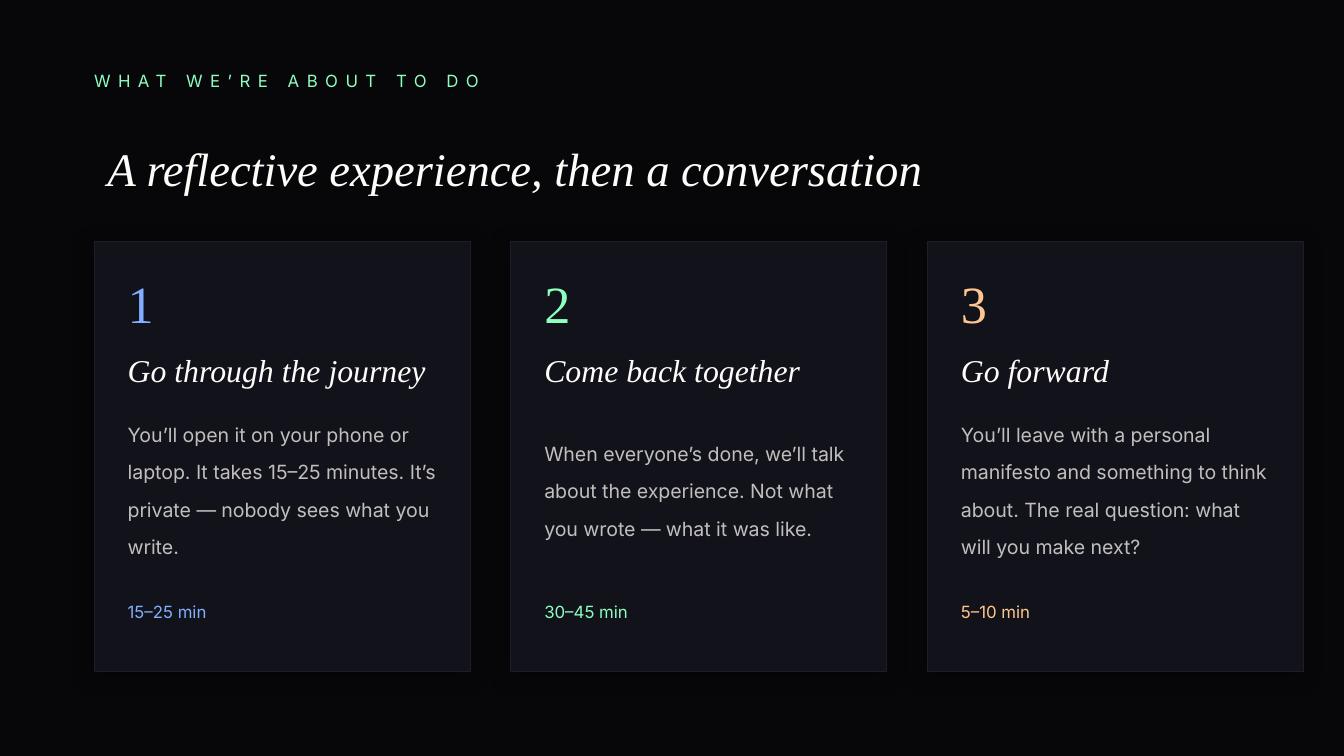
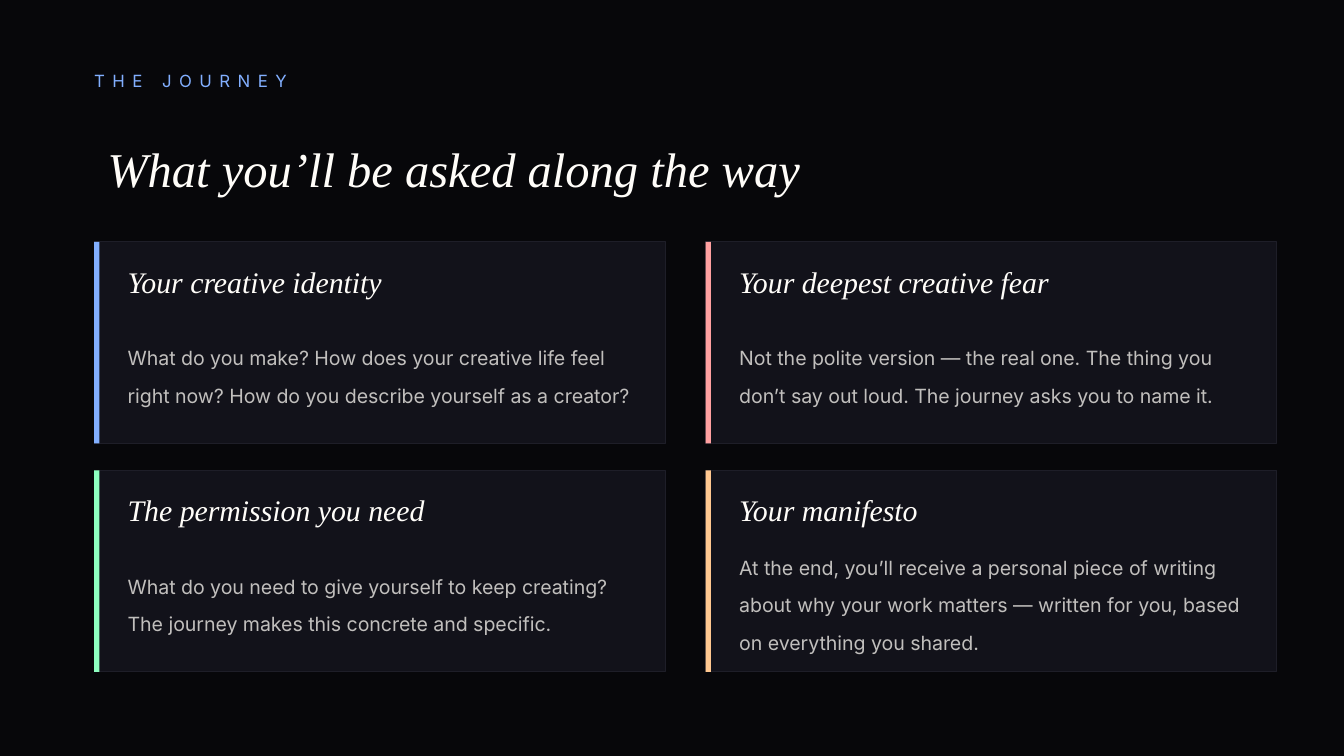
from lxml.etree import SubElement
from pptx import Presentation
from pptx.dml.color import RGBColor
from pptx.enum.shapes import MSO_SHAPE
from pptx.enum.text import MSO_ANCHOR
from pptx.oxml.ns import qn
from pptx.util import Inches, Pt

# Content
STEPS = [
    ("Go through the journey",
     "You’ll open it on your phone or laptop. It takes 15–25 minutes. "
     "It’s private — nobody sees what you write.", "15–25 min", "blue"),
    ("Come back together",
     "When everyone’s done, we’ll talk about the experience. "
     "Not what you wrote — what it was like.", "30–45 min", "green"),
    ("Go forward",
     "You’ll leave with a personal manifesto and something to think about. "
     "The real question: what will you make next?", "5–10 min", "orange"),
]
QUESTIONS = [
    ("Your creative identity",
     "What do you make? How does your creative life feel right now? "
     "How do you describe yourself as a creator?", "blue"),
    ("Your deepest creative fear",
     "Not the polite version — the real one. The thing you don’t say out loud. "
     "The journey asks you to name it.", "red"),
    ("The permission you need",
     "What do you need to give yourself to keep creating? "
     "The journey makes this concrete and specific.", "green"),
    ("Your manifesto",
     "At the end, you’ll receive a personal piece of writing about why your work "
     "matters — written for you, based on everything you shared.", "orange"),
]

# Shared style
COLORS = {
    "background": "07070A", "card": "12121A", "border": "1E1E28",
    "title": "FFFDF9", "body": "C1BFBD", "shadow": "000000",
    "blue": "82AFFF", "green": "8DFFC0", "orange": "FFC78F", "red": "FFA0A0",
}
SANS, SERIF = "Inter", "Times New Roman"
LEFT, CARD_TOP, PAD, GAP = 0.7, 1.8, 0.25, 0.3


def rgb(name):
    return RGBColor.from_string(COLORS[name])


def add_text(s, text, x, y, w, h, size, color, font=SANS, italic=False,
             margin=0, line_spacing=None, tracking=None):
    tf = s.shapes.add_textbox(Inches(x), Inches(y), Inches(w), Inches(h)).text_frame
    tf.word_wrap = True
    tf.vertical_anchor = MSO_ANCHOR.MIDDLE
    tf.margin_left = tf.margin_right = Inches(margin)
    tf.margin_top = tf.margin_bottom = Inches(margin / 2)
    p = tf.paragraphs[0]
    p.text = text
    if line_spacing:
        p.line_spacing = line_spacing
    r = p.runs[0]
    r.font.size, r.font.name, r.font.italic = Pt(size), font, italic
    r.font.color.rgb = rgb(color)
    if tracking:
        r._r.get_or_add_rPr().set("spc", str(tracking * 100))


def add_heading(s, text, x, y, w, h, size, margin=0):
    add_text(s, text, x, y, w, h, size, "title", SERIF, italic=True, margin=margin)


def add_body(s, text, x, y, w, h):
    add_text(s, text, x, y, w, h, 10.5, "body", line_spacing=1.6)


def add_rect(s, x, y, w, h, fill, border=None):
    sp = s.shapes.add_shape(MSO_SHAPE.RECTANGLE,
                            Inches(x), Inches(y), Inches(w), Inches(h))
    sp.fill.solid()
    sp.fill.fore_color.rgb = rgb(fill)
    if border:
        sp.line.color.rgb = rgb(border)
        sp.line.width = Pt(0.5)
    else:
        sp.line.fill.background()
    sp.shadow.inherit = False
    return sp


def add_soft_shadow(sp):
    effects = sp._element.spPr.find(qn("a:effectLst"))
    shadow = SubElement(effects, qn("a:outerShdw"), blurRad=str(Pt(12)),
                        dist=str(Pt(2)), dir=str(135 * 60000),
                        algn="bl", rotWithShape="0")
    color = SubElement(shadow, qn("a:srgbClr"), val=COLORS["shadow"])
    SubElement(color, qn("a:alpha"), val="30000")


def new_slide(prs, label, label_w, label_color, title, title_w, title_size):
    s = prs.slides.add_slide(prs.slide_layouts[6])
    s.background.fill.solid()
    s.background.fill.fore_color.rgb = rgb("background")
    add_text(s, label, LEFT, 0.4, label_w, 0.4, 9, label_color, tracking=4)
    add_heading(s, title, LEFT, 0.9, title_w, 0.7, title_size, margin=0.1)
    return s


# Three numbered steps
def build_steps(prs):
    s = new_slide(prs, "WHAT WE’RE ABOUT TO DO", 8, "green",
                  "A reflective experience, then a conversation", 9, 25)
    card_w, card_h = 2.8, 3.2
    text_w = card_w - 2 * PAD
    for i, (heading, body, duration, accent) in enumerate(STEPS):
        x = LEFT + i * (card_w + GAP)
        add_soft_shadow(add_rect(s, x, CARD_TOP, card_w, card_h, "card", "border"))
        x += PAD
        add_text(s, str(i + 1), x, 2, 0.5, 0.5, 28, accent, SERIF)
        add_heading(s, heading, x, 2.55, text_w, 0.4, 17)
        add_body(s, body, x, 3, text_w, 1.2)
        add_text(s, duration, x, 4.4, text_w, 0.3, 9, accent)


# Two by two grid of questions
def build_questions(prs):
    s = new_slide(prs, "THE JOURNEY", 4, "blue",
                  "What you’ll be asked along the way", 8, 26)
    card_w, card_h, row_gap = 4.25, 1.5, 0.2
    text_w = card_w - 2 * PAD
    for i, (heading, body, accent) in enumerate(QUESTIONS):
        row, col = divmod(i, 2)
        x = LEFT + col * (card_w + GAP)
        y = CARD_TOP + row * (card_h + row_gap)
        add_rect(s, x, y, card_w, card_h, "card", "border")
        add_rect(s, x, y, 0.04, card_h, accent)
        add_heading(s, heading, x + PAD, y + 0.12, text_w, 0.35, 16)
        add_body(s, body, x + PAD, y + 0.5, text_w, 0.9)


def main():
    prs = Presentation()
    prs.slide_width = Inches(10)
    prs.slide_height = prs.slide_width * 9 // 16
    build_steps(prs)
    build_questions(prs)
    prs.save("out.pptx")


if __name__ == "__main__":
    main()
